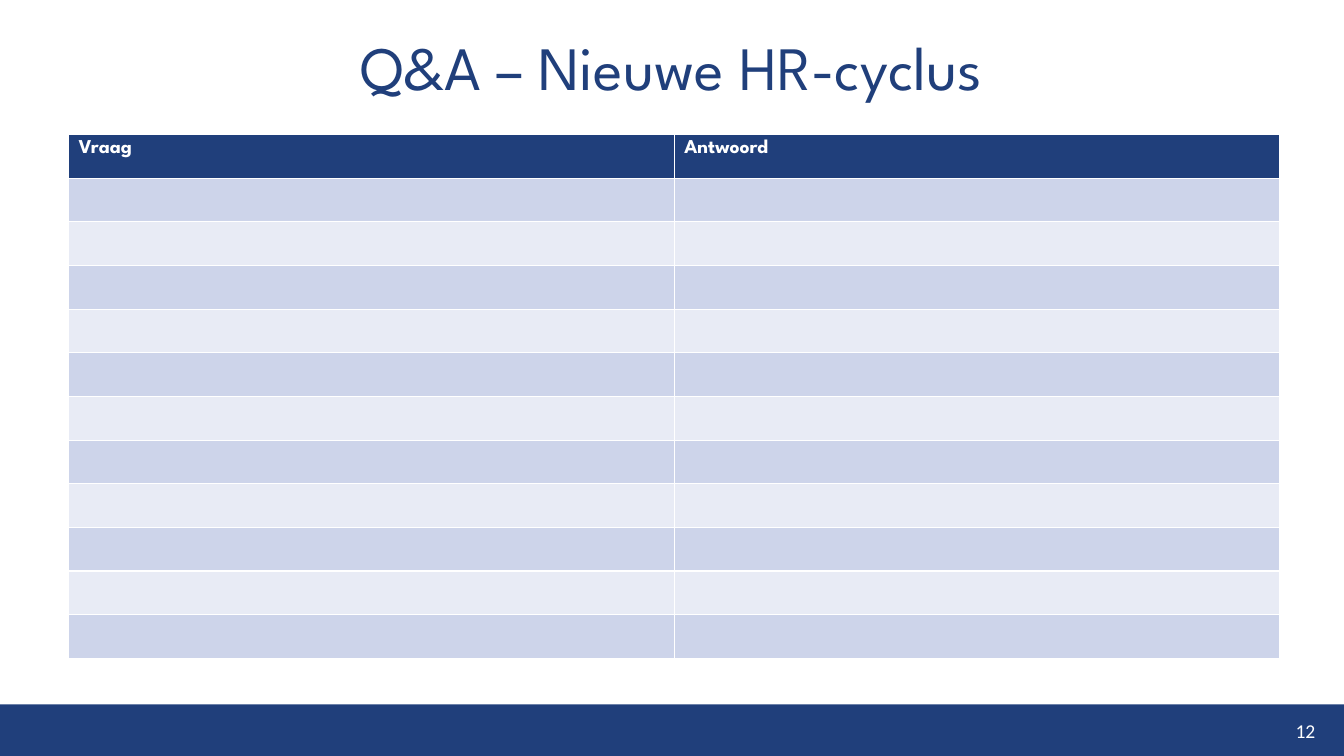
"""Build the Q&A slide about the new HR cycle: title, empty answer table and footer band."""
import pptx
import pptx.dml.color
import pptx.enum.shapes
import pptx.enum.text
import pptx.util

Cm = pptx.util.Cm
Pt = pptx.util.Pt
RGBColor = pptx.dml.color.RGBColor
PP_ALIGN = pptx.enum.text.PP_ALIGN
MSO_ANCHOR = pptx.enum.text.MSO_ANCHOR

NAVY = RGBColor(0x20, 0x3F, 0x7B)
WHITE = RGBColor(0xFF, 0xFF, 0xFF)
BAND_DARK = RGBColor(0xCD, 0xD4, 0xEA)
BAND_LIGHT = RGBColor(0xE8, 0xEB, 0xF5)
HEADINGS = ["Vraag", "Antwoord"]
ROWS = 12
ROW_HEIGHT = Cm(1.1)
COLUMN_WIDTH = Cm(15.26)


def add_run(p, text, font, size, color, bold=False):
    r = p.add_run()
    r.text = text
    r.font.name = font
    r.font.size = Pt(size)
    r.font.color.rgb = color
    r.font.bold = bold


prs = pptx.Presentation()
prs.slide_width = Cm(33.87)
prs.slide_height = Cm(19.05)
s = prs.slides.add_slide(prs.slide_layouts[5])

band = s.shapes.add_shape(pptx.enum.shapes.MSO_SHAPE.RECTANGLE, 0, Cm(17.75), prs.slide_width, Cm(1.3))
band.shadow.inherit = False
band.fill.solid()
band.fill.fore_color.rgb = NAVY
band.line.fill.background()

number = s.shapes.add_textbox(Cm(27.48), Cm(18.03), Cm(5.92), Cm(0.76))
tf = number.text_frame
tf.word_wrap = True
tf.vertical_anchor = MSO_ANCHOR.MIDDLE
p = tf.paragraphs[0]
p.alignment = PP_ALIGN.RIGHT
add_run(p, "12", "Calibri", 14, WHITE)

title = s.shapes.title
title.left, title.top, title.width, title.height = Cm(0.66), Cm(0.76), Cm(32.54), Cm(1.98)
tf = title.text_frame
tf.word_wrap = True
tf.auto_size = pptx.enum.text.MSO_AUTO_SIZE.NONE
tf.vertical_anchor = MSO_ANCHOR.TOP
tf.margin_left = tf.margin_right = Cm(0.33)
tf.margin_top = tf.margin_bottom = Cm(0.18)
p = tf.paragraphs[0]
p.alignment = PP_ALIGN.CENTER
p.line_spacing = 0.9
add_run(p, "Q&A – Nieuwe HR-cyclus", "League Spartan", 44, NAVY)

table = s.shapes.add_table(
    ROWS, len(HEADINGS), Cm(1.73), Cm(3.39), COLUMN_WIDTH * len(HEADINGS), ROW_HEIGHT * ROWS
).table
for column in table.columns:
    column.width = COLUMN_WIDTH
for i, row in enumerate(table.rows):
    row.height = ROW_HEIGHT
    for cell in row.cells:
        cell.fill.solid()
        cell.fill.fore_color.rgb = NAVY if i == 0 else BAND_DARK if i % 2 else BAND_LIGHT
for cell, heading in zip(table.rows[0].cells, HEADINGS):
    add_run(cell.text_frame.paragraphs[0], heading, "League Spartan", 14, WHITE, True)

prs.save("out.pptx")
